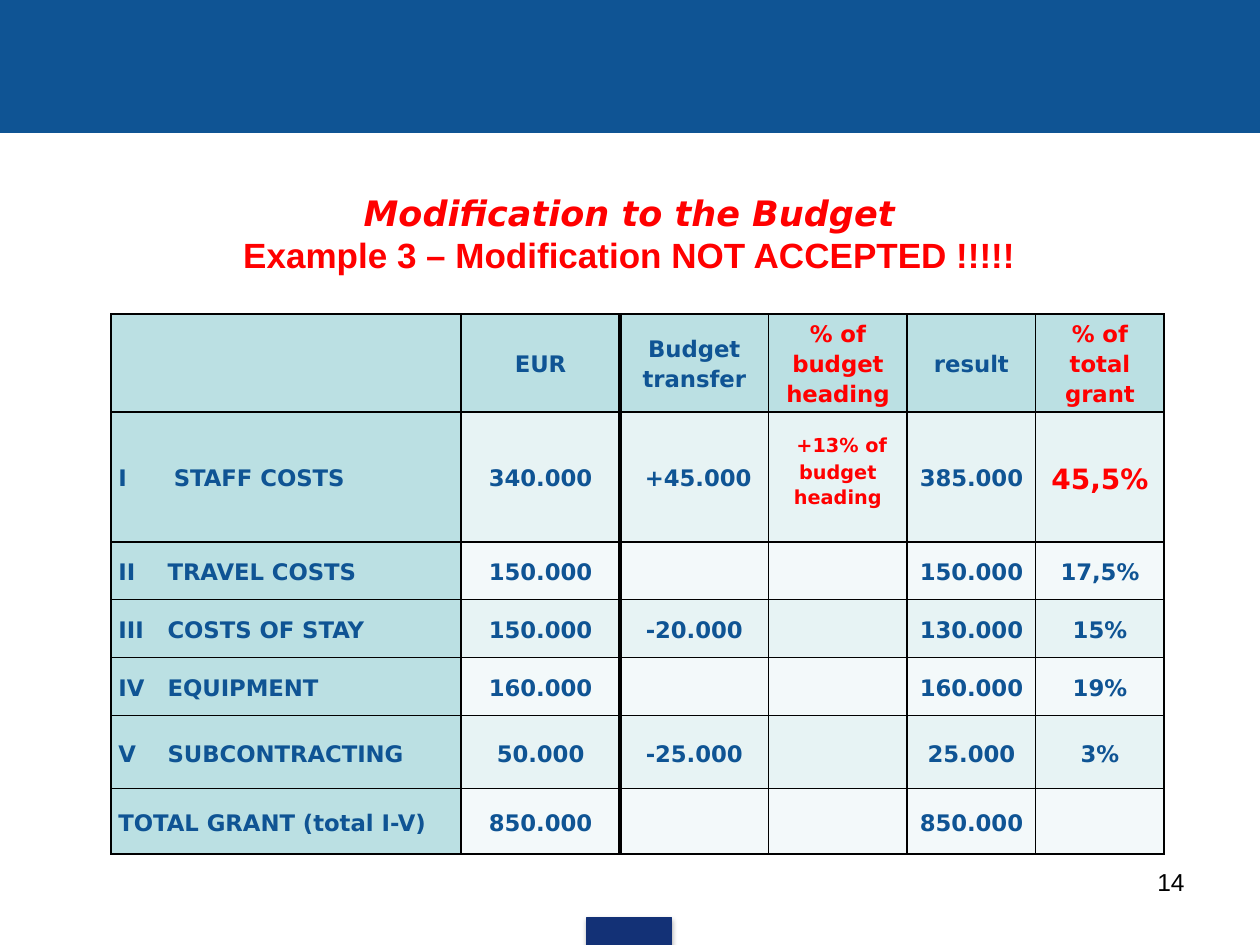
import pptx
import pptx.dml.color
import pptx.enum.shapes
import pptx.enum.text
import pptx.oxml
import pptx.oxml.ns
import pptx.util
from pptx.util import Inches

RGBColor = pptx.dml.color.RGBColor
BLUE = RGBColor(0x0F, 0x54, 0x94)
NAVY = RGBColor(0x13, 0x31, 0x76)
RED = RGBColor(0xFF, 0x00, 0x00)
BLACK = RGBColor(0x00, 0x00, 0x00)
HEADING_FILL = RGBColor(0xBB, 0xE0, 0xE3)
ROW_FILLS = (RGBColor(0xF3, 0xF9, 0xFA), RGBColor(0xE7, 0xF3, 0xF4))

ALIGN = pptx.enum.text.PP_ALIGN
MIDDLE = pptx.enum.text.MSO_ANCHOR.MIDDLE
DRAWING_NS = pptx.oxml.ns.nsdecls("a")

COLUMN_WIDTHS = (2.78, 1.26, 1.18, 1.1, 1.02, 1.02)
ROW_HEIGHTS = (0.78, 1.03, 0.46, 0.46, 0.46, 0.58, 0.52)
BUDGET = (
    ("", "EUR", "Budget transfer", "% of budget heading", "result", "% of total grant"),
    ("I\tSTAFF COSTS", "340.000", " +45.000", "+13% of budget heading", "385.000", "45,5%"),
    ("II\tTRAVEL COSTS", "150.000", "", "", "150.000", "17,5%"),
    ("III\tCOSTS OF STAY", "150.000", "-20.000", "", "130.000", "15%"),
    ("IV\tEQUIPMENT", "160.000", "", "", "160.000", "19%"),
    ("V\tSUBCONTRACTING", "50.000", "-25.000", "", "25.000", "3%"),
    ("TOTAL GRANT (total I-V)", "850.000", "", "", "850.000", ""),
)
# Formats of single cells, by row and column
HIGHLIGHTS = {
    (0, 3): {"color": RED},
    (0, 5): {"color": RED},
    (1, 3): {"color": RED, "size": 11},
    (1, 5): {"color": RED, "size": 16},
}


def add_span(para, text, font="DejaVu Sans", size=13, color=BLUE, bold=True, italic=False):
    span = para.add_run()
    span.text = text
    span.font.name = font
    span.font.size = pptx.util.Pt(size)
    span.font.color.rgb = color
    span.font.bold = bold
    span.font.italic = italic


def add_bar(page, box, color):
    bar = page.shapes.add_shape(pptx.enum.shapes.MSO_SHAPE.RECTANGLE, *box)
    bar.shadow.inherit = False
    bar.fill.solid()
    bar.fill.fore_color.rgb = color
    bar.line.color.rgb = color
    bar.line.width = pptx.util.Pt(0.75)
    return bar


def add_footer_marker(page, box):
    marker = add_bar(page, box, NAVY)
    effects = marker.element.spPr.find(pptx.oxml.ns.qn("a:effectLst"))
    effects.append(pptx.oxml.parse_xml(
        f'<a:outerShdw {DRAWING_NS} blurRad="{pptx.util.Pt(3.1)}" dist="{pptx.util.Pt(1.8)}" '
        'dir="5400000" rotWithShape="0"><a:srgbClr val="000000">'
        '<a:alpha val="35000"/></a:srgbClr></a:outerShdw>'))


def place_title(page, box):
    title = page.shapes.title
    title.left, title.top, title.width, title.height = box
    frame = title.text_frame
    frame.word_wrap = True
    frame.auto_size = pptx.enum.text.MSO_AUTO_SIZE.NONE
    frame.vertical_anchor = MIDDLE
    first = frame.paragraphs[0]
    second = frame.add_paragraph()
    for para in (first, second):
        para.alignment = ALIGN.CENTER
    add_span(first, "Modification to the Budget", size=20, color=RED, italic=True)
    add_span(second, "Example 3 – Modification NOT ACCEPTED !!!!!",
             font="Arial", size=20, color=RED)


def set_borders(cell, column):
    """Draw thin borders, with a thick rule between the second and third columns."""
    widths = {"L": 3 if column == 2 else 1, "R": 3 if column == 1 else 1, "T": 1, "B": 1}
    for side, width in widths.items():
        cell._tc.get_or_add_tcPr().append(pptx.oxml.parse_xml(
            f'<a:ln{side} {DRAWING_NS} w="{pptx.util.Pt(width)}"><a:solidFill>'
            f'<a:srgbClr val="{BLACK}"/></a:solidFill></a:ln{side}>'))


def set_label_tab(para, position):
    para._p.get_or_add_pPr().append(pptx.oxml.parse_xml(
        f'<a:tabLst {DRAWING_NS}><a:tab pos="{position}" algn="l"/></a:tabLst>'))


def fill_cell(cell, row, column, text):
    set_borders(cell, column)
    is_heading = row == 0 or column == 0
    cell.fill.solid()
    cell.fill.fore_color.rgb = HEADING_FILL if is_heading else ROW_FILLS[row % 2]
    cell.vertical_anchor = MIDDLE
    cell.margin_left = cell.margin_right = Inches(0.06)
    cell.margin_top = cell.margin_bottom = 0
    if not text:
        return
    para = cell.text_frame.paragraphs[0]
    para.alignment = ALIGN.CENTER if column else ALIGN.LEFT
    para.line_spacing = 1.15
    if "\t" in text:
        set_label_tab(para, Inches(0.44 if row == 1 else 0.39))
    if (row, column) == (1, 3):
        cell.margin_bottom = Inches(0.13)
        add_span(para, " ")
    add_span(para, text, **HIGHLIGHTS.get((row, column), {}))


def add_budget_table(page, box):
    table = page.shapes.add_table(len(ROW_HEIGHTS), len(COLUMN_WIDTHS), *box).table
    table.first_row = table.horz_banding = False
    for column, width in zip(table.columns, COLUMN_WIDTHS):
        column.width = Inches(width)
    for row, height in zip(table.rows, ROW_HEIGHTS):
        row.height = Inches(height)
    for row, texts in enumerate(BUDGET):
        for column, text in enumerate(texts):
            fill_cell(table.cell(row, column), row, column, text)


def add_page_number(page, box):
    frame = page.shapes.add_textbox(*box).text_frame
    frame.word_wrap = True
    para = frame.paragraphs[0]
    para.alignment = ALIGN.RIGHT
    add_span(para, "14", font="Arial", size=14, color=BLACK, bold=False)


def inch_box(*lengths):
    return [Inches(length) for length in lengths]


def main():
    deck = pptx.Presentation()
    deck.slide_width, deck.slide_height = inch_box(10, 7.5)
    page = deck.slides.add_slide(deck.slide_layouts.get_by_name("Title Only"))
    add_bar(page, inch_box(0, 0, 10, 1.05), BLUE)
    add_footer_marker(page, inch_box(4.66, 7.28, 0.67, 0.22))
    place_title(page, inch_box(1.06, 1.47, 7.87, 0.77))
    add_budget_table(page, inch_box(0.88, 2.49, sum(COLUMN_WIDTHS), sum(ROW_HEIGHTS)))
    add_page_number(page, inch_box(7.17, 6.83, 2.33, 0.52))
    deck.save("out.pptx")


if __name__ == "__main__":
    main()
